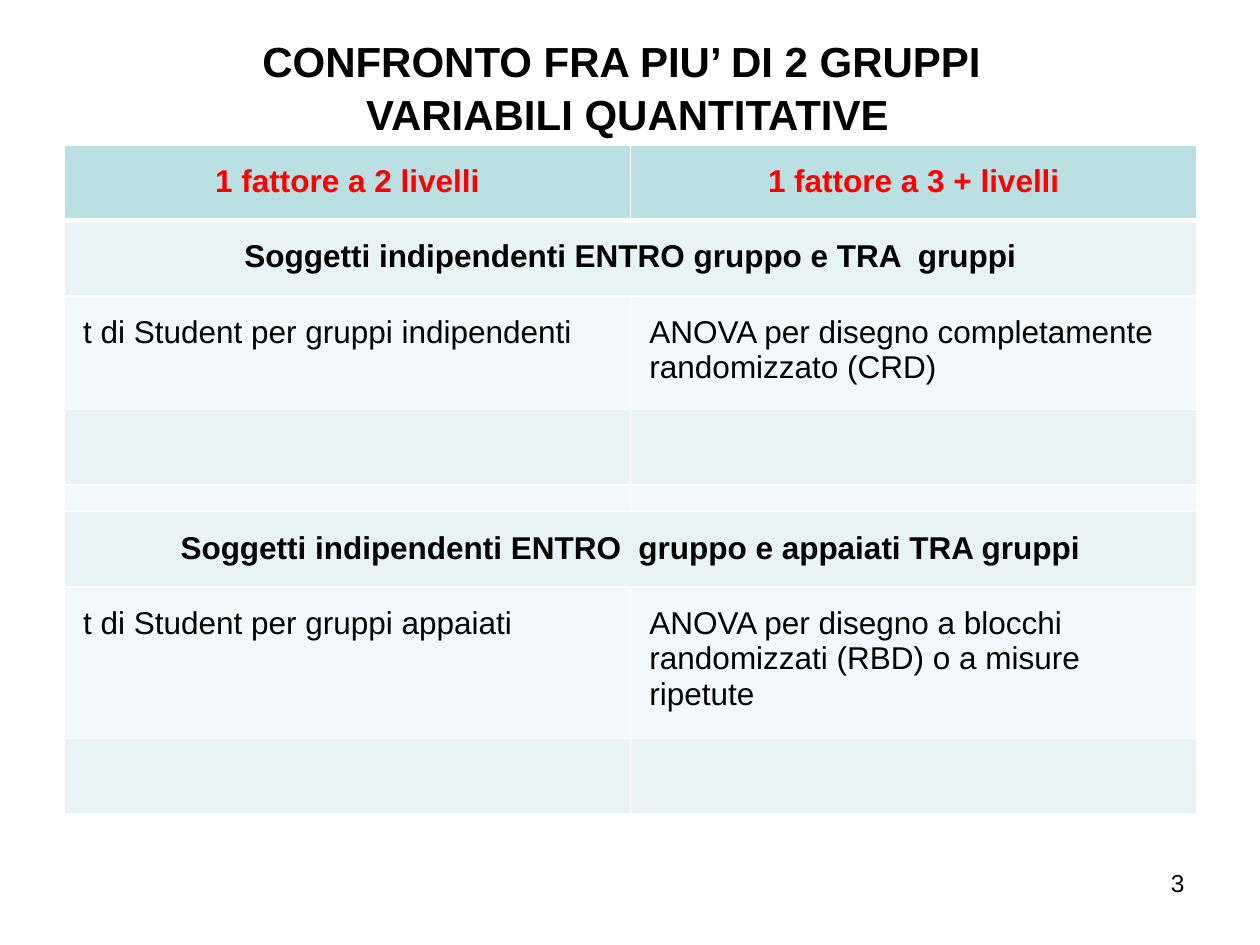
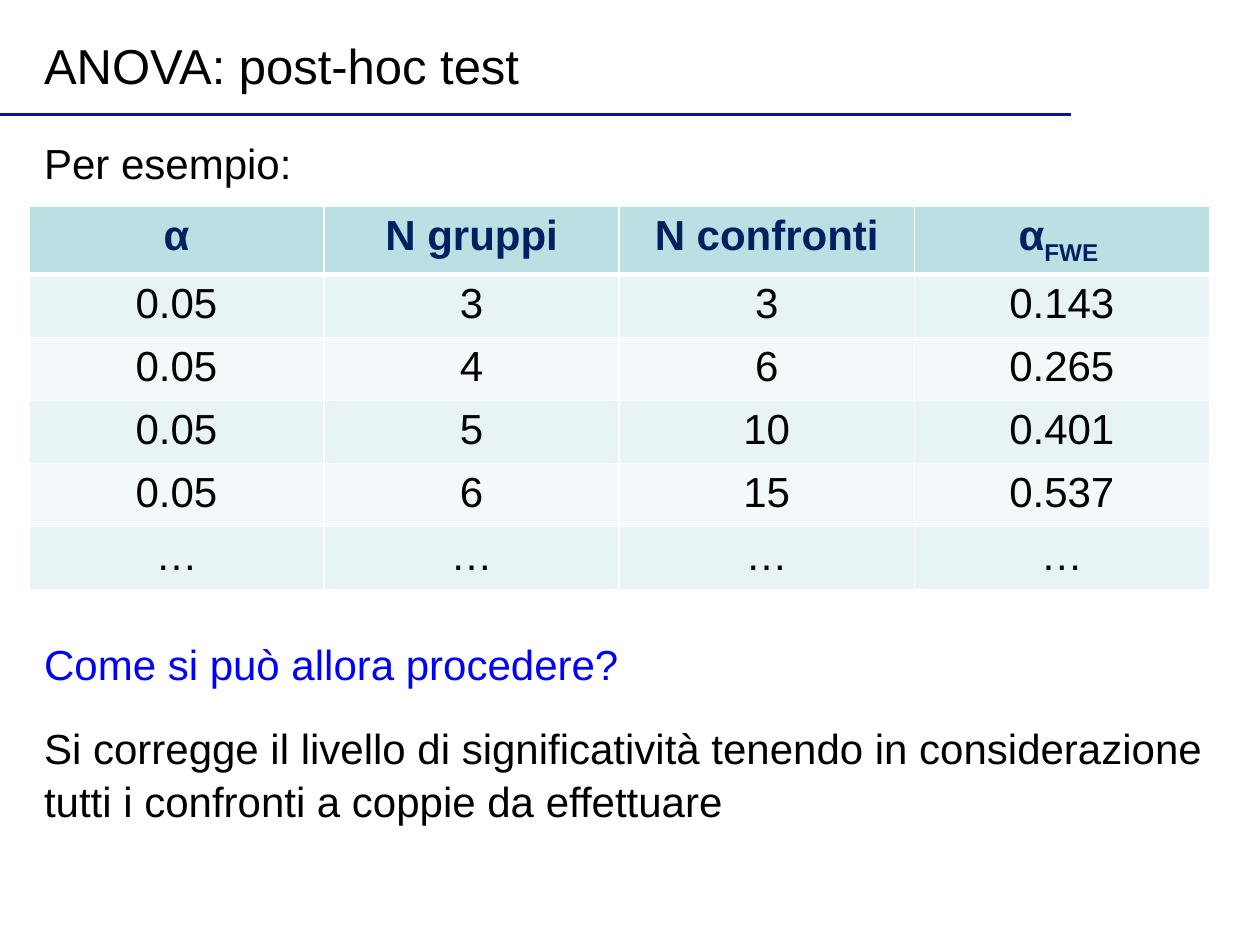
from dataclasses import dataclass
from typing import Optional

from lxml import etree
from pptx import Presentation
from pptx.dml.color import RGBColor
from pptx.enum import shapes, text
from pptx.oxml import ns
from pptx.util import Inches, Pt

# Shared look
FONT = "Arial"
BLACK, WHITE, RED, BLUE, NAVY = "000000", "FFFFFF", "FF0000", "0000FF", "002060"
RULE_BLUE = "0C1290"
HEADER_FILL = "BBE0E3"
BAND_FILLS = ("F3F9FA", "E7F3F4")
LINE_SPACING = 1.05
LEFT, CENTER, RIGHT = text.PP_ALIGN.LEFT, text.PP_ALIGN.CENTER, text.PP_ALIGN.RIGHT
TOP, MIDDLE = text.MSO_ANCHOR.TOP, text.MSO_ANCHOR.MIDDLE


@dataclass
class Area:
    left: float
    top: float
    width: float
    height: float

    def lengths(self) -> tuple:
        return tuple(Inches(n) for n in (self.left, self.top, self.width, self.height))


@dataclass
class Style:
    size: float
    color: str = BLACK
    bold: bool = False
    align: text.PP_ALIGN = LEFT
    before: float = 0
    after: float = 0
    spacing: float = LINE_SPACING


@dataclass
class Cell:
    words: str
    style: Style
    subscript: str = ""
    across: bool = False


@dataclass
class Grid:
    area: Area
    row_heights: list
    rows: list
    margin: Optional[float] = None


def rgb(value: str) -> RGBColor:
    return RGBColor.from_string(value)


def format_paragraph(para, style: Style) -> None:
    para.alignment = style.align
    para.line_spacing = style.spacing
    para.space_before, para.space_after = Pt(style.before), Pt(style.after)
    for span in para.runs:
        span.font.name = FONT
        span.font.size = Pt(style.size)
        span.font.bold = style.bold
        span.font.color.rgb = rgb(style.color)


def fill_box(box, area: Area, lines: list, anchor=TOP, wrap: bool = True) -> None:
    """Place a text shape and write (words, style) lines without bullets."""
    box.left, box.top, box.width, box.height = area.lengths()
    frame = box.text_frame
    frame.text = "\n".join(words for words, _ in lines)
    frame.auto_size = text.MSO_AUTO_SIZE.NONE
    frame.word_wrap = wrap
    frame.vertical_anchor = anchor
    for para, (_, style) in zip(frame.paragraphs, lines):
        format_paragraph(para, style)
        properties = para._p.get_or_add_pPr()
        properties.set("marL", "0")
        properties.set("indent", "0")
        etree.SubElement(properties, ns.qn("a:buNone"))


def set_borders(cell, is_header: bool, below_header: bool) -> None:
    widths = {"L": 1, "R": 1, "T": 3 if below_header else 1, "B": 3 if is_header else 1}
    properties = cell._tc.get_or_add_tcPr()
    for index, (side, width) in enumerate(widths.items()):
        line = etree.Element(ns.qn(f"a:ln{side}"), w=str(int(Pt(width))))
        fill = etree.SubElement(line, ns.qn("a:solidFill"))
        etree.SubElement(fill, ns.qn("a:srgbClr"), val=WHITE)
        properties.insert(index, line)


def write_cell(cell, content: Cell) -> None:
    para = cell.text_frame.paragraphs[0]
    para.text = content.words
    if content.subscript:
        span = para.add_run()
        span.text = content.subscript
        span._r.get_or_add_rPr().set("baseline", "-25000")
    format_paragraph(para, content.style)


def shrink_empty_cell(cell) -> None:
    cell.margin_left = cell.margin_right = cell.margin_top = cell.margin_bottom = 0
    para = cell.text_frame.paragraphs[0]
    etree.SubElement(para._p, ns.qn("a:endParaRPr"), sz="800")


def draw_grid(page, grid: Grid, column_count: int) -> None:
    table = page.shapes.add_table(len(grid.rows), column_count, *grid.area.lengths()).table
    for column in table.columns:
        column.width = Inches(grid.area.width / column_count)
    for r, (height, contents) in enumerate(zip(grid.row_heights, grid.rows)):
        table.rows[r].height = Inches(height)
        for c in range(column_count):
            cell = table.cell(r, c)
            cell.fill.solid()
            cell.fill.fore_color.rgb = rgb(BAND_FILLS[r % 2] if r else HEADER_FILL)
            set_borders(cell, r == 0, r == 1)
            if c >= len(contents):
                if not contents:
                    shrink_empty_cell(cell)
                continue
            if grid.margin is not None:
                cell.margin_left = cell.margin_right = Inches(grid.margin)
                cell.margin_top = cell.margin_bottom = Inches(grid.margin)
            write_cell(cell, contents[c])
        if contents and contents[0].across:
            table.cell(r, 0).merge(table.cell(r, column_count - 1))


def build_comparison(deck) -> None:
    page = deck.slides.add_slide(deck.slide_layouts[5])
    heading = Style(24, bold=True, align=CENTER)
    fill_box(page.shapes.title, Area(0.04, 0.21, 9.88, 0.9),
             [("CONFRONTO FRA PIU’ DI 2 GRUPPI ", heading),
              ("VARIABILI QUANTITATIVE", heading)])

    # Tests by number of levels
    header = Style(18, RED, True, CENTER, spacing=1)
    section = Style(18, bold=True, align=CENTER, spacing=1)
    body = Style(18, spacing=1)
    rows = [
        [Cell("1 fattore a 2 livelli", header), Cell("1 fattore a 3 + livelli", header)],
        [Cell("Soggetti indipendenti ENTRO gruppo e TRA  gruppi", section, across=True)],
        [Cell("t di Student per gruppi indipendenti", body),
         Cell("ANOVA per disegno completamente randomizzato (CRD)", body)],
        [],
        [],
        [Cell("Soggetti indipendenti ENTRO  gruppo e appaiati TRA gruppi", section, across=True)],
        [Cell("t di Student per gruppi appaiati", body),
         Cell("ANOVA per disegno a blocchi  randomizzati (RBD) o a misure ripetute", body)],
        [],
    ]
    heights = [0.6, 0.6, 0.9, 0.6, 0.21, 0.6, 1.2, 0.6]
    draw_grid(page, Grid(Area(0.51, 1.15, 8.99, 5.31), heights, rows, 0.15), 2)

    # Page number
    number_area = Area(8.54, 6.83, 0.96, 0.52)
    number = page.shapes.add_textbox(*number_area.lengths())
    fill_box(number, number_area, [("3", Style(14, align=RIGHT))])


def build_post_hoc(deck) -> None:
    page = deck.slides.add_slide(deck.slide_layouts[1])

    # Title and rule
    rule = page.shapes.add_connector(shapes.MSO_CONNECTOR.STRAIGHT, 0, Inches(0.91),
                                     Inches(8.5), Inches(0.91))
    rule.line.color.rgb = rgb(RULE_BLUE)
    rule.line.width = Pt(2)
    etree.SubElement(rule._element.spPr, ns.qn("a:effectLst"))
    fill_box(page.shapes.title, Area(0.25, 0.22, 4.01, 0.57),
             [("ANOVA: post-hoc test", Style(28))], MIDDLE, wrap=False)

    # Text above and below the table
    fill_box(page.placeholders[1], Area(0.25, 1.02, 9.45, 5.57), [
        ("Per esempio:", Style(24, after=12)),
        ("Come si può allora procedere?", Style(24, BLUE, before=244, after=18)),
        ("Si corregge il livello di significatività tenendo in considerazione "
         "tutti i confronti a coppie da effettuare", Style(24, after=18)),
    ])

    # Family-wise error by number of groups
    header = Style(24, NAVY, True, CENTER, spacing=1)
    body = Style(24, align=CENTER, spacing=1)
    values = [
        ("0.05", "3", "3", "0.143"),
        ("0.05", "4", "6", "0.265"),
        ("0.05", "5", "10", "0.401"),
        ("0.05", "6", "15", "0.537"),
        ("…",) * 4,
    ]
    rows = [[Cell("α", header), Cell("N gruppi", header), Cell("N confronti", header),
             Cell("α", header, subscript="FWE ")]]
    rows += [[Cell(value, body) for value in line] for line in values]
    draw_grid(page, Grid(Area(0.23, 1.64, 9.37, 3.02), [0.54] + [0.5] * 5, rows), 4)


def main() -> None:
    deck = Presentation()
    deck.slide_width, deck.slide_height = Inches(10), Inches(7.5)
    build_comparison(deck)
    build_post_hoc(deck)
    deck.save("out.pptx")


if __name__ == "__main__":
    main()
